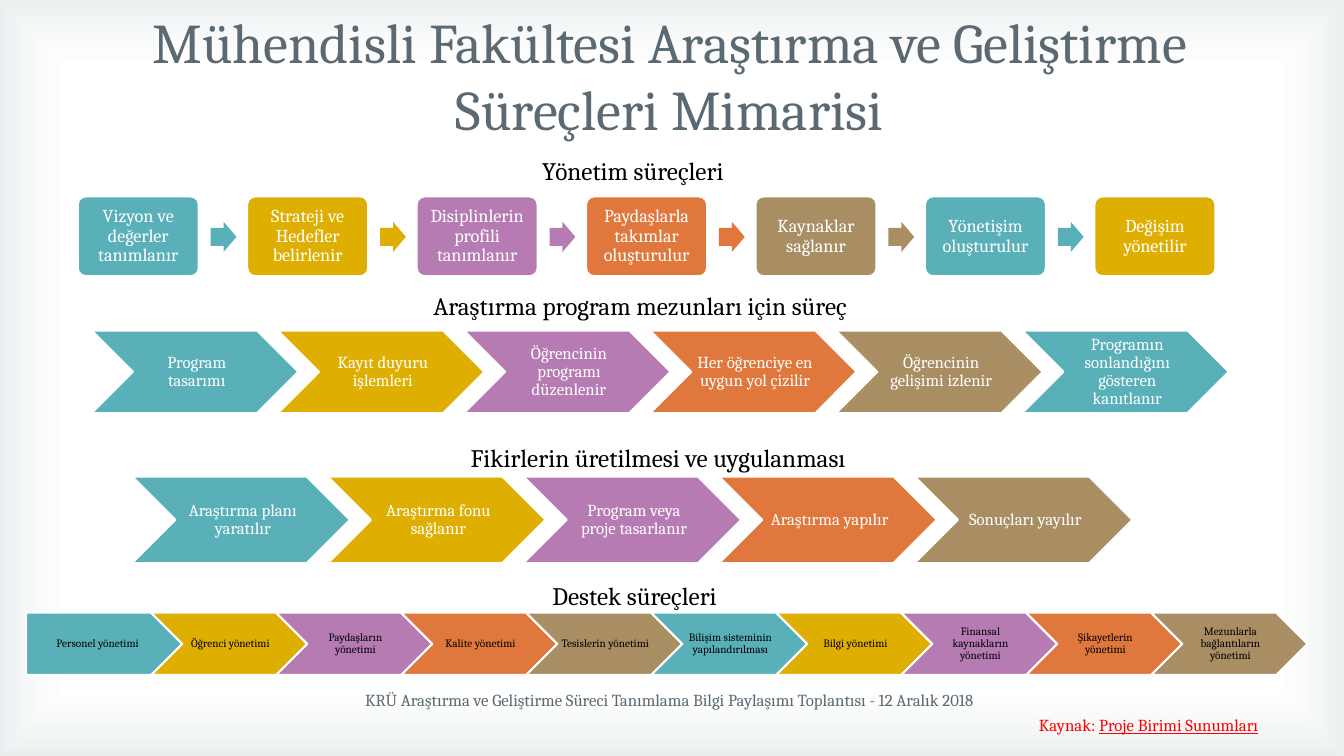
from dataclasses import dataclass

from pptx import Presentation
from pptx.dml.color import RGBColor
from pptx.enum.shapes import MSO_SHAPE
from pptx.enum.text import MSO_ANCHOR, PP_ALIGN
from pptx.oxml import parse_xml
from pptx.util import Cm, Pt


@dataclass(frozen=True)
class Theme:
    """Colours, font and type sizes of the slide."""

    font: str = "Cambria"
    accents: tuple = ("59B0B9", "DEAE00", "B77BB4", "E0773C", "A98D63")
    slate: str = "5B6973"
    white: str = "FFFFFF"
    black: str = "000000"
    red: str = "FF0000"
    title: float = 40
    heading: float = 18
    box: float = 13
    body: float = 12
    small: float = 8

    def accent(self, index):
        """Return the accent colour for a position in a row."""
        return self.accents[index % len(self.accents)]


THEME = Theme()

VIGNETTE = """
<a:gradFill xmlns:a="http://schemas.openxmlformats.org/drawingml/2006/main" rotWithShape="1">
  <a:gsLst>
    <a:gs pos="83000"><a:srgbClr val="FFFFFF"><a:alpha val="11000"/></a:srgbClr></a:gs>
    <a:gs pos="100000"><a:srgbClr val="A4B7BB"><a:alpha val="23000"/></a:srgbClr></a:gs>
  </a:gsLst>
  <a:path path="rect"><a:fillToRect l="50000" t="50000" r="50000" b="50000"/></a:path>
</a:gradFill>"""

MANAGEMENT_STEPS = (
    "Vizyon ve değerler tanımlanır",
    "Strateji ve Hedefler belirlenir",
    "Disiplinlerin profili tanımlanır",
    "Paydaşlarla takımlar oluşturulur",
    "Kaynaklar sağlanır",
    "Yönetişim oluşturulur",
    "Değişim yönetilir",
)
GRADUATE_STEPS = (
    "Program tasarımı",
    "Kayıt duyuru işlemleri",
    "Öğrencinin programı düzenlenir",
    "Her öğrenciye en uygun yol çizilir",
    "Öğrencinin gelişimi izlenir",
    "Programın sonlandığını gösteren kanıtlanır",
)
IDEA_STEPS = (
    "Araştırma planı yaratılır",
    "Araştırma fonu sağlanır",
    "Program veya proje tasarlanır",
    "Araştırma yapılır",
    "Sonuçları yayılır",
)
SUPPORT_STEPS = (
    "Personel yönetimi",
    "Öğrenci yönetimi",
    "Paydaşların yönetimi",
    "Kalite yönetimi",
    "Tesislerin yönetimi",
    "Bilişim sisteminin yapılandırılması",
    "Bilgi yönetimi",
    "Finansal kaynakların yönetimi",
    "Şikayetlerin yönetimi",
    "Mezunlarla bağlantıların yönetimi",
)
HEADINGS = (
    ("Yönetim süreçleri", 13.41, 3.78, 5.54),
    ("Araştırma program mezunları için süreç", 10.67, 7.19, 11.96),
    ("Fikirlerin üretilmesi ve uygulanması", 11.61, 11.02, 10.87),
    ("Destek süreçleri", 13.67, 14.5, 5.05),
)


def apply_format(target, values):
    """Set every attribute named in a dict of format values."""
    for name, value in values.items():
        setattr(target, name, value)


def add_run(paragraph, text, size, color, underline=None):
    """Append a run in the theme font."""
    run = paragraph.add_run()
    run.text = text
    apply_format(run.font, {"name": THEME.font, "size": Pt(size), "underline": underline})
    run.font.color.rgb = RGBColor.from_string(color)


def add_text(slide, box, text, size, color, align=PP_ALIGN.LEFT, anchor=MSO_ANCHOR.TOP):
    """Add a wrapping text box and return its paragraph."""
    frame = slide.shapes.add_textbox(*map(Cm, box)).text_frame
    apply_format(frame, {"word_wrap": True, "vertical_anchor": anchor})
    paragraph = frame.paragraphs[0]
    paragraph.alignment = align
    add_run(paragraph, text, size, color)
    return paragraph


def add_block(slide, kind, box, fill, outlined=True):
    """Add a filled preset shape, with a white outline if wanted."""
    shape = slide.shapes.add_shape(kind, *map(Cm, box))
    shape.shadow.inherit = False
    shape.fill.solid()
    shape.fill.fore_color.rgb = RGBColor.from_string(fill)
    if outlined:
        shape.line.color.rgb = RGBColor.from_string(THEME.white)
        shape.line.width = Pt(1.5)
    else:
        shape.line.fill.background()
    return shape


def add_label(shape, text, size, color, side=0.13, edge=0.05):
    """Write a centred label inside a shape."""
    frame = shape.text_frame
    apply_format(frame, {
        "word_wrap": True,
        "vertical_anchor": MSO_ANCHOR.MIDDLE,
        "margin_left": Cm(side),
        "margin_right": Cm(edge),
        "margin_top": Cm(edge),
        "margin_bottom": Cm(edge),
    })
    paragraph = frame.paragraphs[0]
    apply_format(paragraph, {"alignment": PP_ALIGN.CENTER, "line_spacing": 0.9})
    add_run(paragraph, text, size, color)


def add_vignette(slide, width, height):
    """Shade the edges of the slide with a gradient."""
    shape = add_block(slide, MSO_SHAPE.RECTANGLE, (0, 0, width, height), THEME.white, False)
    properties = shape.fill._xPr
    properties.replace(properties.solidFill, parse_xml(VIGNETTE))


def add_box_row(slide, steps, left, top, pitch):
    """Add rounded boxes joined by block arrows."""
    for index, step in enumerate(steps):
        x = left + index * pitch
        color = THEME.accent(index)
        box = add_block(slide, MSO_SHAPE.ROUNDED_RECTANGLE, (x, top, 3.05, 2.01), color)
        box.adjustments[0] = 0.1
        add_label(box, step, THEME.box, THEME.white, edge=0.13)
        if index < len(steps) - 1:
            arrow = add_block(slide, MSO_SHAPE.RIGHT_ARROW,
                              (x + 3.35, top + 0.64, 0.65, 0.76), color, False)
            arrow.adjustments[0] = 0.6


def add_chevron_row(slide, steps, box, pitch, size, color, first=MSO_SHAPE.CHEVRON, side=0.13):
    """Add a row of chevrons at an equal pitch."""
    left, top, width, height = box
    for index, step in enumerate(steps):
        kind = MSO_SHAPE.CHEVRON if index else first
        place = (left + index * pitch, top, width, height)
        chevron = add_block(slide, kind, place, THEME.accent(index))
        add_label(chevron, step, size, color, side, edge=0.04)


def main():
    """Build the slide and save it."""
    presentation = Presentation()
    width, height = 33.87, 19.05
    apply_format(presentation, {"slide_width": Cm(width), "slide_height": Cm(height)})
    slide = presentation.slides.add_slide(presentation.slide_layouts[6])

    add_vignette(slide, width, height)
    add_text(slide, (2.51, 0.43, 28.73, 2.92),
             "Mühendisli Fakültesi Araştırma ve Geliştirme Süreçleri Mimarisi",
             THEME.title, THEME.slate, PP_ALIGN.CENTER, MSO_ANCHOR.MIDDLE)
    for text, left, top, span in HEADINGS:
        add_text(slide, (left, top, span, 1.02), text, THEME.heading, THEME.black)

    add_box_row(slide, MANAGEMENT_STEPS, 1.96, 4.95, 4.27)
    add_chevron_row(slide, GRADUATE_STEPS, (2.31, 8.33, 5.21, 2.08), 4.69,
                    THEME.body, THEME.white)
    add_chevron_row(slide, IDEA_STEPS, (3.33, 12.01, 5.49, 2.18), 4.93,
                    THEME.body, THEME.white)
    add_chevron_row(slide, SUPPORT_STEPS, (0.66, 15.44, 3.94, 1.57), 3.15,
                    THEME.small, THEME.black, MSO_SHAPE.PENTAGON, 0.1)

    add_text(slide, (3.91, 17.12, 25.93, 1.02),
             "KRÜ Araştırma ve Geliştirme Süreci Tanımlama Bilgi Paylaşımı Toplantısı - 12 Aralık 2018",
             THEME.body, THEME.slate, PP_ALIGN.CENTER, MSO_ANCHOR.MIDDLE)
    source = add_text(slide, (25.93, 17.88, 7.75, 0.76), "Kaynak: ", THEME.body, THEME.red)
    add_run(source, "Proje Birimi Sunumları", THEME.body, THEME.red, True)
    presentation.save("out.pptx")


if __name__ == "__main__":
    main()
